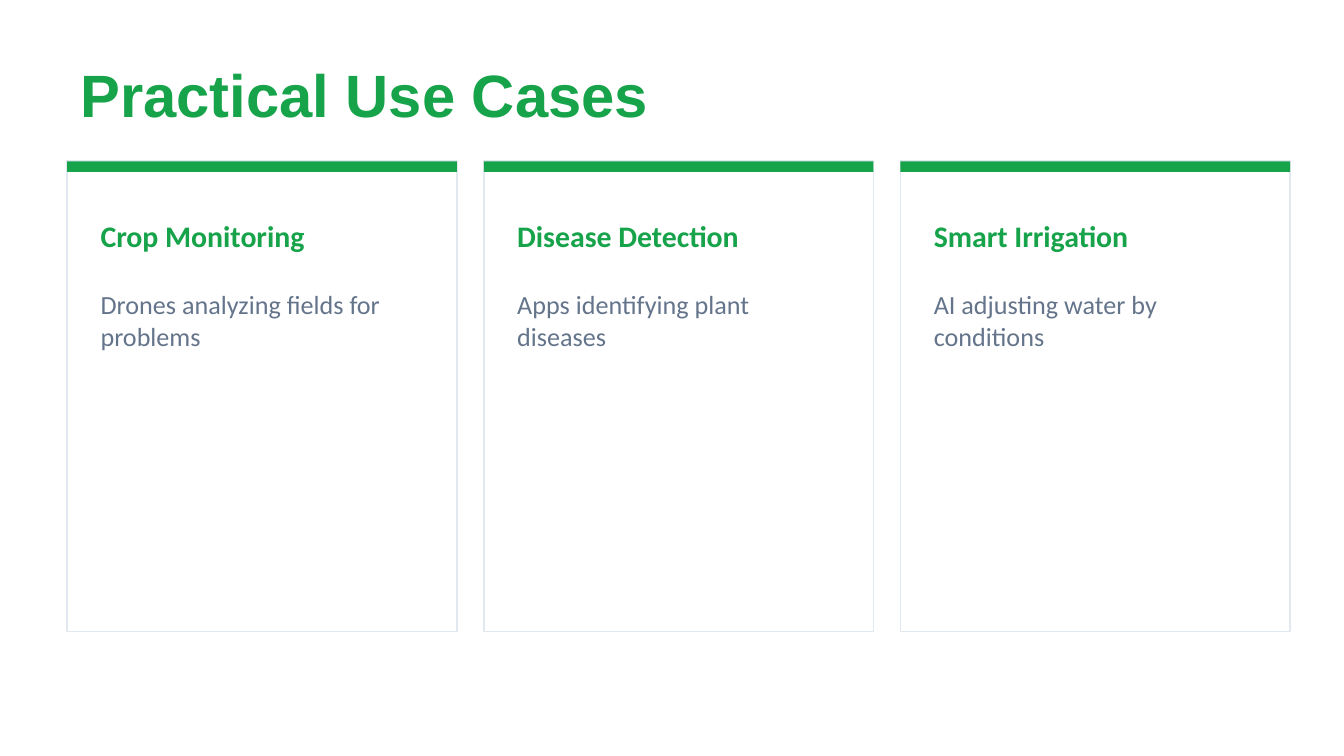
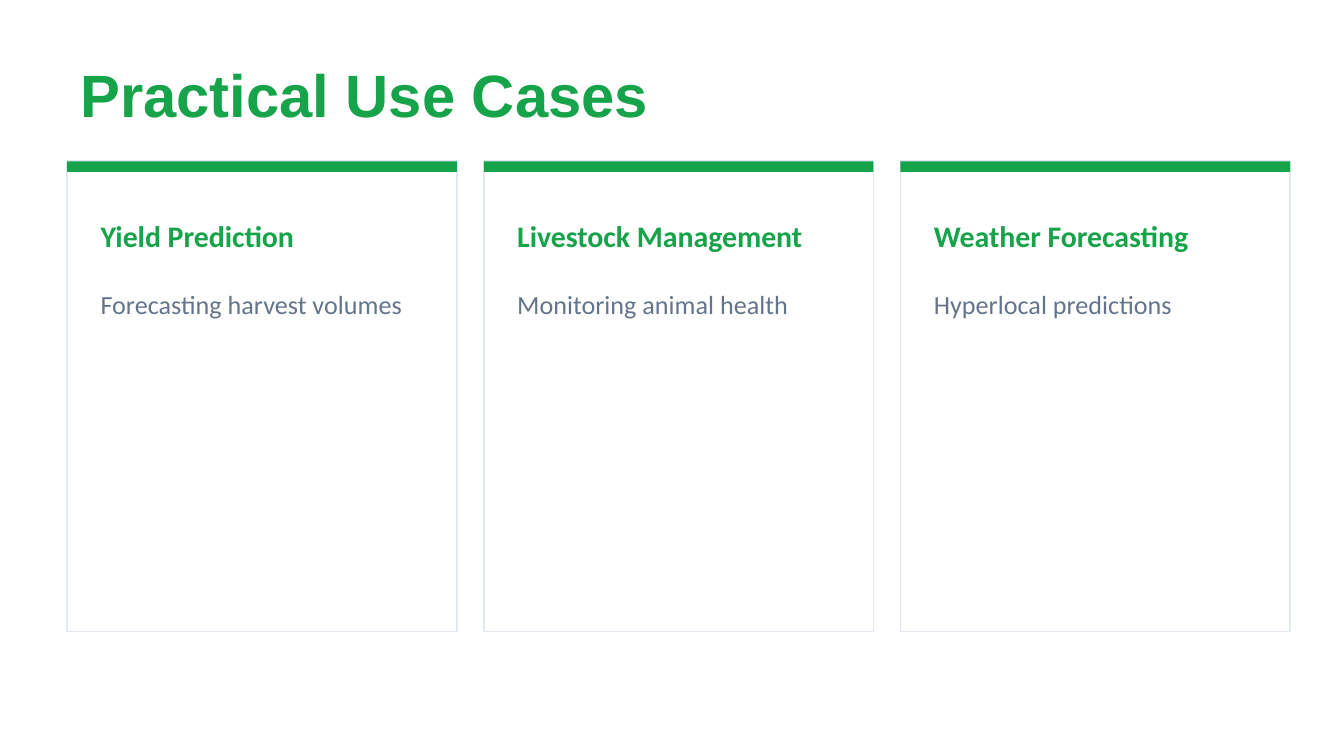
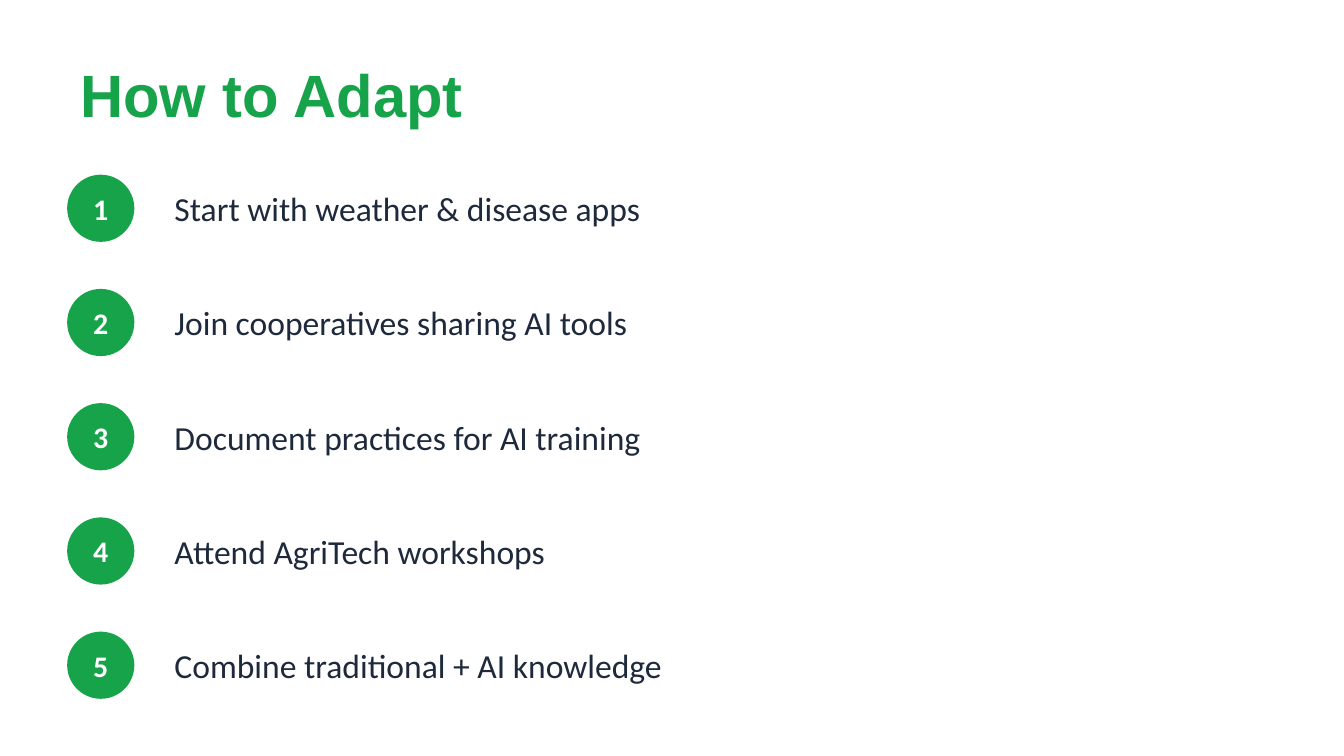
from pptx import Presentation
from pptx.dml.color import RGBColor
from pptx.enum.shapes import MSO_SHAPE as Shape
from pptx.enum.text import MSO_ANCHOR as Anchor, PP_ALIGN as Align
from pptx.util import Inches, Pt

COLORS = {
    "paper": "FFFFFF",
    "green": "16A34A",
    "border": "E2E8F0",
    "muted": "64748B",
    "ink": "1E293B",
}
HEADING_FONT, BODY_FONT = "Arial", "Calibri"
COLUMNS = 100  # grid cells across the page; cells are square

LEFT = 5
CARD_TOP, CARD_WIDTH, CARD_HEIGHT, CARD_GAP = 12, 29, 35, 2
CARD_PADDING, BAND_HEIGHT = 1.5, 0.8
STEP_TOP, STEP_PITCH, BADGE_SIZE = 13, 8.5, 5

USE_CASES = [
    [
        ("Crop Monitoring", "Drones analyzing fields for problems"),
        ("Disease Detection", "Apps identifying plant diseases"),
        ("Smart Irrigation", "AI adjusting water by conditions"),
    ],
    [
        ("Yield Prediction", "Forecasting harvest volumes"),
        ("Livestock Management", "Monitoring animal health"),
        ("Weather Forecasting", "Hyperlocal predictions"),
    ],
]
STEPS = [
    "Start with weather & disease apps",
    "Join cooperatives sharing AI tools",
    "Document practices for AI training",
    "Attend AgriTech workshops",
    "Combine traditional + AI knowledge",
]


def color(name):
    return RGBColor.from_string(COLORS[name])


class Deck:
    """Holds the shared style and the page being drawn; lengths are grid cells."""

    def __init__(self):
        self.file = Presentation()
        self.file.slide_width = Inches(10)
        self.file.slide_height = Inches(5.625)
        self.cell = self.file.slide_width / COLUMNS
        self.page = None

    def place(self, *cells):
        return [round(length * self.cell) for length in cells]

    def new_page(self, title):
        self.page = self.file.slides.add_slide(self.file.slide_layouts[6])
        fill = self.page.background.fill
        fill.solid()
        fill.fore_color.rgb = color("paper")
        self.text(title, (LEFT, 4, 90, 6), 32, "green", bold=True, font=HEADING_FONT)

    def set_text(self, box, text, size, ink, bold=False, font=BODY_FONT,
                 anchor=Anchor.MIDDLE, align=Align.LEFT):
        frame = box.text_frame
        frame.text = text
        frame.word_wrap = True
        frame.vertical_anchor = anchor
        para = frame.paragraphs[0]
        para.alignment = align
        span = para.runs[0].font
        span.name, span.size, span.bold = font, Pt(size), bold
        span.color.rgb = color(ink)

    def text(self, text, area, size, ink, **style):
        box = self.page.shapes.add_textbox(*self.place(*area))
        self.set_text(box, text, size, ink, **style)

    def shape(self, kind, area, fill, line=None):
        shape = self.page.shapes.add_shape(kind, *self.place(*area))
        shape.shadow.inherit = False
        shape.fill.solid()
        shape.fill.fore_color.rgb = color(fill)
        if line:
            shape.line.color.rgb = color(line)
            shape.line.width = Pt(1)
        else:
            shape.line.fill.background()
        return shape

    def card(self, index, heading, body):
        left = LEFT + index * (CARD_WIDTH + CARD_GAP)
        self.shape(Shape.RECTANGLE, (left, CARD_TOP, CARD_WIDTH, CARD_HEIGHT),
                   "paper", line="border")
        self.shape(Shape.RECTANGLE, (left, CARD_TOP, CARD_WIDTH, BAND_HEIGHT), "green")
        text_left, text_width = left + CARD_PADDING, CARD_WIDTH - 2 * CARD_PADDING
        self.text(heading, (text_left, CARD_TOP + 3, text_width, 5), 16, "green", bold=True)
        self.text(body, (text_left, CARD_TOP + 9, text_width, 24), 14, "muted",
                  anchor=Anchor.TOP)

    def step(self, index, label):
        """Draw one numbered badge with its label."""
        top = STEP_TOP + index * STEP_PITCH
        badge = self.shape(Shape.OVAL, (LEFT, top, BADGE_SIZE, BADGE_SIZE), "green")
        frame = badge.text_frame
        frame.margin_left = frame.margin_right = 0
        self.set_text(badge, str(index + 1), 16, "paper", bold=True, align=Align.CENTER)
        self.text(label, (LEFT + 7, top, 83, BADGE_SIZE), 18, "ink")


def main():
    deck = Deck()
    for cards in USE_CASES:
        deck.new_page("Practical Use Cases")
        for index, (heading, body) in enumerate(cards):
            deck.card(index, heading, body)
    deck.new_page("How to Adapt")
    for index, label in enumerate(STEPS):
        deck.step(index, label)
    deck.file.save("out.pptx")


if __name__ == "__main__":
    main()
